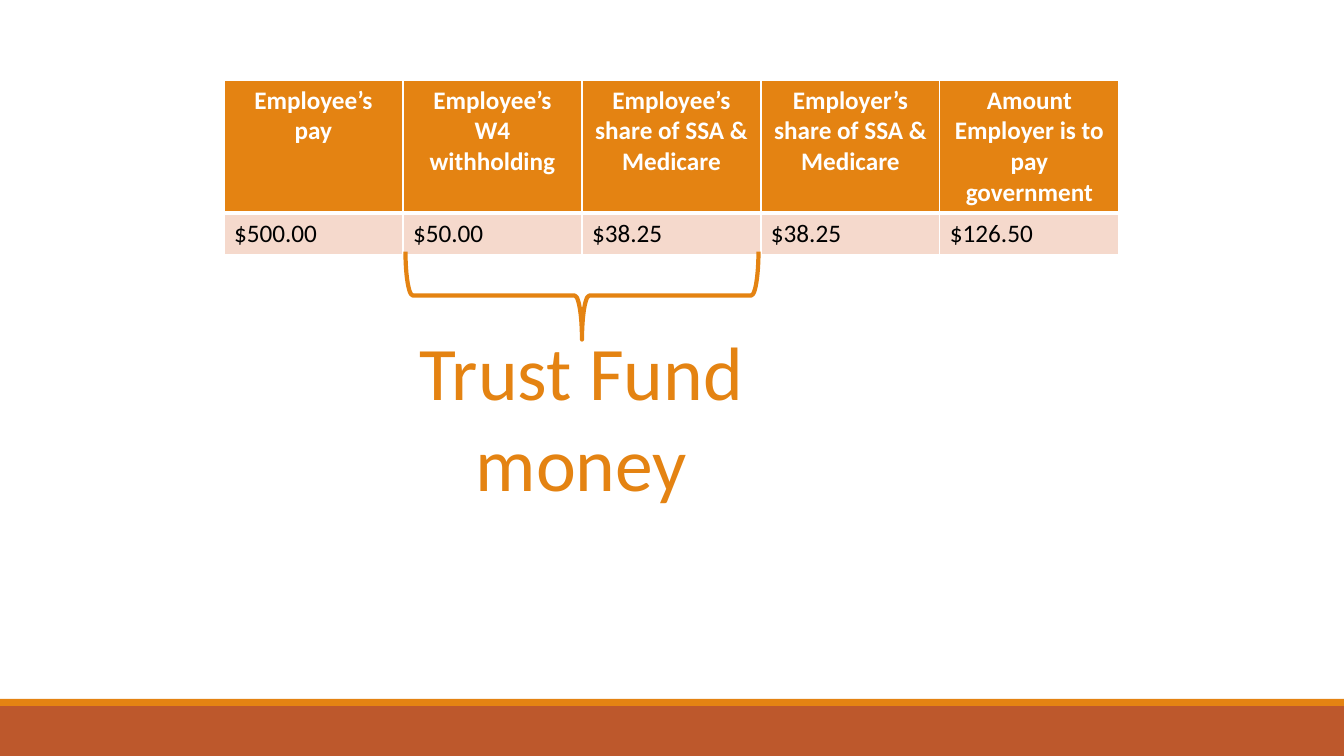
import pptx
import pptx.util
import pptx.dml.color
import pptx.enum.shapes
import pptx.enum.text
import pptx.oxml.ns
import lxml.etree

# Content
HEADINGS = [
    "Employee’s pay",
    "Employee’s W4 withholding",
    "Employee’s share of SSA & Medicare",
    "Employer’s share of SSA & Medicare",
    "Amount Employer is to pay government",
]
AMOUNTS = ["$500.00", "$50.00", "$38.25", "$38.25", "$126.50"]
BRACE_LABEL = "Trust Fund\vmoney"

# Style
FONT = "Calibri"
ORANGE = pptx.dml.color.RGBColor(0xE4, 0x83, 0x12)
RUST = pptx.dml.color.RGBColor(0xBD, 0x58, 0x2C)
BLUSH = pptx.dml.color.RGBColor(0xF5, 0xD9, 0xCC)
WHITE = pptx.dml.color.RGBColor(0xFF, 0xFF, 0xFF)
BLACK = pptx.dml.color.RGBColor(0, 0, 0)
CENTER = pptx.enum.text.PP_ALIGN.CENTER
LEFT = pptx.enum.text.PP_ALIGN.LEFT
SHAPE = pptx.enum.shapes.MSO_SHAPE

# Layout in px
SLIDE_W, SLIDE_H = 1344, 756
TABLE_X, TABLE_Y, COLUMN_W = 224, 80, 179
ROW_HEIGHTS = [132, 41]
BARS = [(706, 50, RUST), (699, 7, ORANGE)]  # top, height, colour
BRACE = (538, 119, 88, 353)  # before its quarter turn
LABEL = (408, 320, 347, 194)


def px(length):
    return pptx.util.Emu(round(length * 12192000 / SLIDE_W))


def style_paragraph(paragraph, size, color, align, bold=False):
    paragraph.alignment = align
    paragraph.font.name = FONT
    paragraph.font.size = pptx.util.Pt(size)
    paragraph.font.bold = bold
    paragraph.font.color.rgb = color


def set_borders(cell, widths):
    properties = cell._tc.get_or_add_tcPr()
    for side, points in zip("LRTB", widths):
        line = lxml.etree.SubElement(properties, pptx.oxml.ns.qn(f"a:ln{side}"),
                                     w=str(pptx.util.Pt(points)))
        fill = lxml.etree.SubElement(line, pptx.oxml.ns.qn("a:solidFill"))
        lxml.etree.SubElement(fill, pptx.oxml.ns.qn("a:srgbClr"), val=str(WHITE))


deck = pptx.Presentation()
deck.slide_width, deck.slide_height = px(SLIDE_W), px(SLIDE_H)
slide = deck.slides.add_slide(deck.slide_layouts[6])

# Bars along the bottom
for top, height, color in BARS:
    bar = slide.shapes.add_shape(SHAPE.RECTANGLE, 0, px(top), px(SLIDE_W), px(height))
    bar.shadow.inherit = False
    bar.fill.solid()
    bar.fill.fore_color.rgb = color
    bar.line.fill.background()

# Payroll table
payroll = slide.shapes.add_table(
    2, len(HEADINGS), px(TABLE_X), px(TABLE_Y),
    px(COLUMN_W * len(HEADINGS)), px(sum(ROW_HEIGHTS))).table
for column in payroll.columns:
    column.width = px(COLUMN_W)

ROWS = [
    (HEADINGS, ORANGE, WHITE, CENTER, True, (1, 1, 1, 3)),
    (AMOUNTS, BLUSH, BLACK, LEFT, False, (1, 1, 3, 1)),
]
for r, (texts, fill, color, align, bold, borders) in enumerate(ROWS):
    payroll.rows[r].height = px(ROW_HEIGHTS[r])
    for c, text in enumerate(texts):
        cell = payroll.cell(r, c)
        cell.text = text
        style_paragraph(cell.text_frame.paragraphs[0], 18, color, align, bold)
        set_borders(cell, borders)
        cell.fill.solid()
        cell.fill.fore_color.rgb = fill

# Brace under the withheld amounts
brace = slide.shapes.add_shape(SHAPE.LEFT_BRACE, *map(px, BRACE))
brace.rotation = 270
brace.shadow.inherit = False
brace.fill.background()
brace.line.color.rgb = ORANGE
brace.line.width = pptx.util.Pt(3)

# Brace label
label = slide.shapes.add_textbox(*map(px, LABEL)).text_frame
label.word_wrap = False
label.auto_size = pptx.enum.text.MSO_AUTO_SIZE.SHAPE_TO_FIT_TEXT
label.paragraphs[0].text = BRACE_LABEL
style_paragraph(label.paragraphs[0], 54, ORANGE, CENTER)

deck.save("out.pptx")
